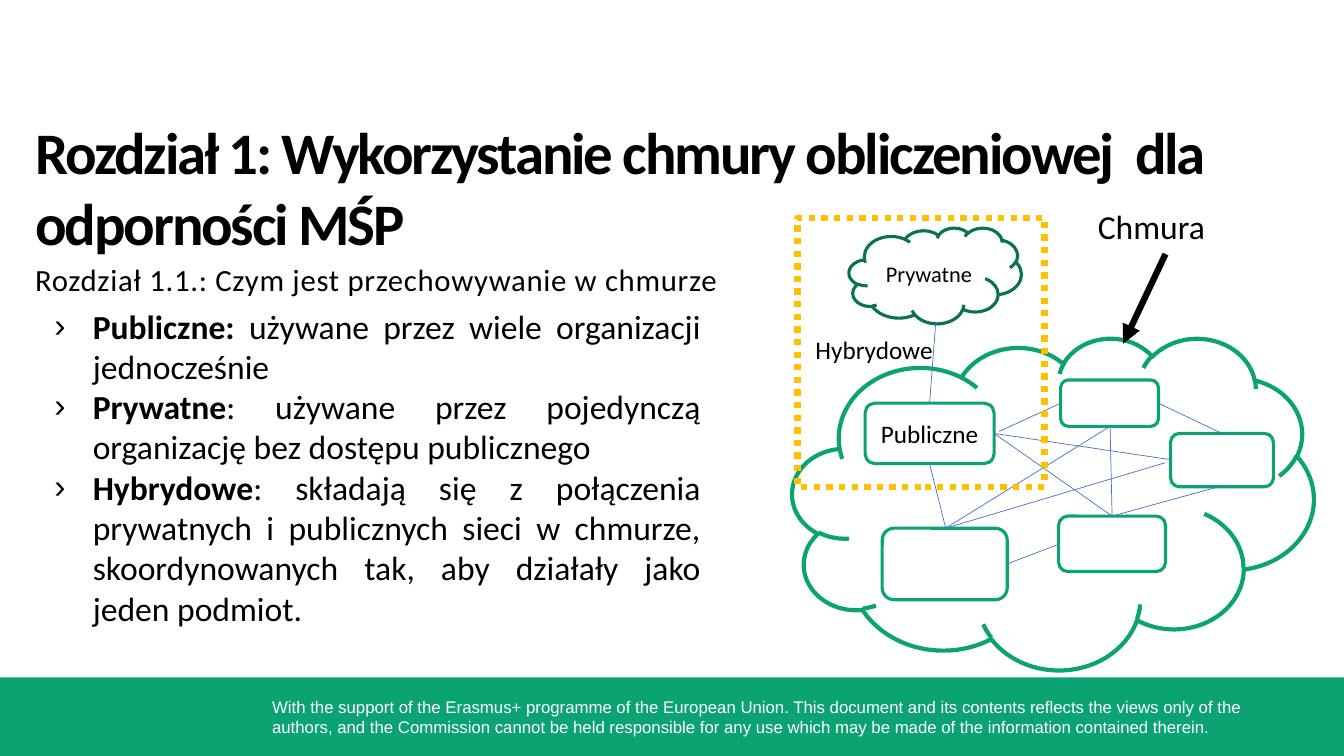
import pptx
import pptx.util
import pptx.dml.color
import pptx.enum.dml
import pptx.enum.shapes
import pptx.enum.text
import pptx.oxml
import pptx.oxml.ns

Inches = pptx.util.Inches
Pt = pptx.util.Pt
RGBColor = pptx.dml.color.RGBColor
Preset = pptx.enum.shapes.MSO_SHAPE
Align = pptx.enum.text.PP_ALIGN
Anchor = pptx.enum.text.MSO_ANCHOR

GREEN = RGBColor(0x0C, 0xA3, 0x73)
DARK_GREEN = RGBColor(0x08, 0x72, 0x51)
YELLOW = RGBColor(0xFF, 0xC0, 0x00)
BLUE = RGBColor(0x44, 0x72, 0xC4)
BLACK = RGBColor(0, 0, 0)
WHITE = RGBColor(0xFF, 0xFF, 0xFF)

CLOUD_TYPES = [
    ("Publiczne: ", "używane przez wiele organizacji jednocześnie"),
    ("Prywatne", ": używane przez pojedynczą organizację bez dostępu publicznego"),
    ("Hybrydowe", ": składają się z połączenia prywatnych i publicznych sieci w chmurze, "
                  "skoordynowanych tak, aby działały jako jeden podmiot."),
]
NODES = [
    (11.61, 4.3, 1.02, 0.53, ""),
    (8.58, 4, 1.28, 0.6, "Publiczne"),
    (8.75, 5.24, 1.24, 0.71, ""),
    (10.52, 3.77, 0.97, 0.46, ""),
    (10.5, 5.12, 1.06, 0.55, ""),
]
LINKS = [
    (10, 5.59, 10.5, 5.4),
    (11.03, 5.12, 12.12, 4.82),
    (9.86, 4.3, 11.61, 4.56),
    (11.49, 4, 12.12, 4.3),
    (10.52, 4, 9.91, 4.28),
    (9.22, 4.6, 9.38, 5.24),
    (9.86, 4.3, 11.03, 5.12),
    (9.22, 4, 9.28, 3.21),
    (11.01, 4.23, 9.38, 5.24),
    (11.03, 5.12, 11.01, 4.23),
    (11.56, 4.59, 9.38, 5.24),
]


class SlideBuilder:
    font = "Calibri"

    def __init__(self, slide):
        self.slide = slide

    def style(self, paragraph, size, color=BLACK, name=None, spacing=0):
        for run in paragraph.runs:
            run.font.size = Pt(size)
            run.font.name = name or self.font
            run.font.color.rgb = color
            if spacing:
                run.font._element.set("spc", str(int(spacing * 100)))

    def place(self, shape, left, top, width, height):
        shape.left, shape.top = Inches(left), Inches(top)
        shape.width, shape.height = Inches(width), Inches(height)
        text_frame = shape.text_frame
        text_frame.word_wrap = True
        text_frame.auto_size = pptx.enum.text.MSO_AUTO_SIZE.NONE
        text_frame.vertical_anchor = Anchor.TOP
        return text_frame

    def remove_side_margins(self, text_frame, top):
        text_frame.margin_left = text_frame.margin_right = text_frame.margin_bottom = 0
        text_frame.margin_top = Inches(top)

    def title(self, box, text):
        text_frame = self.place(self.slide.shapes.title, *box)
        self.remove_side_margins(text_frame, 0.01)
        text_frame.text = text
        paragraph = text_frame.paragraphs[0]
        paragraph.alignment = Align.LEFT
        self.style(paragraph, 42, spacing=-1.5)
        paragraph.runs[0].font.bold = True

    def bullets(self, box, items):
        text_frame = self.place(self.slide.placeholders[1], *box)
        for index, (term, description) in enumerate(items):
            paragraph = text_frame.add_paragraph() if index else text_frame.paragraphs[0]
            paragraph.text = term
            paragraph.add_run().text = description
            paragraph.alignment = Align.JUSTIFY
            paragraph.space_before = Pt(0)
            properties = paragraph._p.get_or_add_pPr()
            properties.set("marL", str(Inches(0.38)))
            properties.set("indent", str(-Inches(0.38)))
            bullet = pptx.oxml.parse_xml(f'<a:buChar {pptx.oxml.ns.nsdecls("a")} char="›"/>')
            properties.append(bullet)
            self.style(paragraph, 24)
            paragraph.runs[0].font.bold = True

    def text(self, box, text, size, color=BLACK, name=None, spacing=0):
        text_box = self.slide.shapes.add_textbox(*map(Inches, box))
        text_frame = self.place(text_box, *box)
        text_frame.text = text
        self.style(text_frame.paragraphs[0], size, color, name, spacing)
        return text_frame

    def shape(self, preset, box, line=None, width=0, fill=WHITE, text="", size=18):
        shape = self.slide.shapes.add_shape(preset, *map(Inches, box))
        shape.shadow.inherit = False
        if fill is None:
            shape.fill.background()
        else:
            shape.fill.solid()
            shape.fill.fore_color.rgb = fill
        if line is None:
            shape.line.fill.background()
        else:
            shape.line.color.rgb = line
            shape.line.width = Pt(width)
        if text:
            text_frame = shape.text_frame
            text_frame.text = text
            text_frame.vertical_anchor = Anchor.MIDDLE
            text_frame.paragraphs[0].alignment = Align.CENTER
            self.style(text_frame.paragraphs[0], size)
        return shape

    def line(self, ends, color, width, arrow=False):
        connector = self.slide.shapes.add_connector(
            pptx.enum.shapes.MSO_CONNECTOR.STRAIGHT, *map(Inches, ends))
        connector.line.color.rgb = color
        connector.line.width = Pt(width)
        namespace = pptx.oxml.ns.nsdecls("a")
        if arrow:
            head = pptx.oxml.parse_xml(f'<a:tailEnd {namespace} type="triangle"/>')
            connector.line._get_or_add_ln().append(head)
        connector._element.spPr.append(pptx.oxml.parse_xml(f"<a:effectLst {namespace}/>"))


def main():
    presentation = pptx.Presentation()
    presentation.slide_width = Inches(13.33)
    presentation.slide_height = Inches(7.5)
    builder = SlideBuilder(presentation.slides.add_slide(presentation.slide_layouts[1]))

    builder.shape(Preset.RECTANGLE, (0, 6.72, 13.33, 0.78), fill=GREEN)
    builder.text(
        (2.6, 6.86, 10.42, 0.5),
        "With the support of the Erasmus+ programme of the European Union. This document and its "
        "contents reflects the views only of the authors, and the Commission cannot be held "
        "responsible for any use which may be made of the information contained therein.",
        12, WHITE, "Arial")

    builder.title((0.35, 1.14, 12.28, 1.43),
                  "Rozdział 1: Wykorzystanie chmury obliczeniowej  dla odporności MŚP")
    subtitle = builder.text((0.35, 2.57, 6.84, 0.39),
                            "Rozdział 1.1.: Czym jest przechowywanie w chmurze", 22, spacing=0.5)
    builder.remove_side_margins(subtitle, 0.02)
    builder.bullets((0.44, 2.98, 6.61, 3.33), CLOUD_TYPES)

    builder.shape(Preset.CLOUD, (7.86, 3.35, 5.17, 3.29), GREEN, 3)
    for *box, label in NODES:
        builder.shape(Preset.ROUNDED_RECTANGLE, box, GREEN, 2.25, text=label)
    builder.shape(Preset.CLOUD, (8.42, 2.26, 1.71, 0.95), DARK_GREEN, 2.25,
                  text="Prywatne", size=16)
    for ends in LINKS:
        builder.line(ends, BLUE, 0.5)

    hybrid_frame = builder.shape(Preset.RECTANGLE, (7.91, 2.16, 2.45, 2.67), YELLOW, 4.5, fill=None)
    hybrid_frame.line.dash_style = pptx.enum.dml.MSO_LINE.ROUND_DOT
    builder.text((7.99, 3.27, 1.87, 0.4), "Hybrydowe", 18)
    builder.text((10.79, 1.99, 2.3, 0.5), "Chmura", 24)
    builder.line((11.56, 2.52, 11.14, 3.41), BLACK, 4.5, arrow=True)

    presentation.save("out.pptx")


if __name__ == "__main__":
    main()
